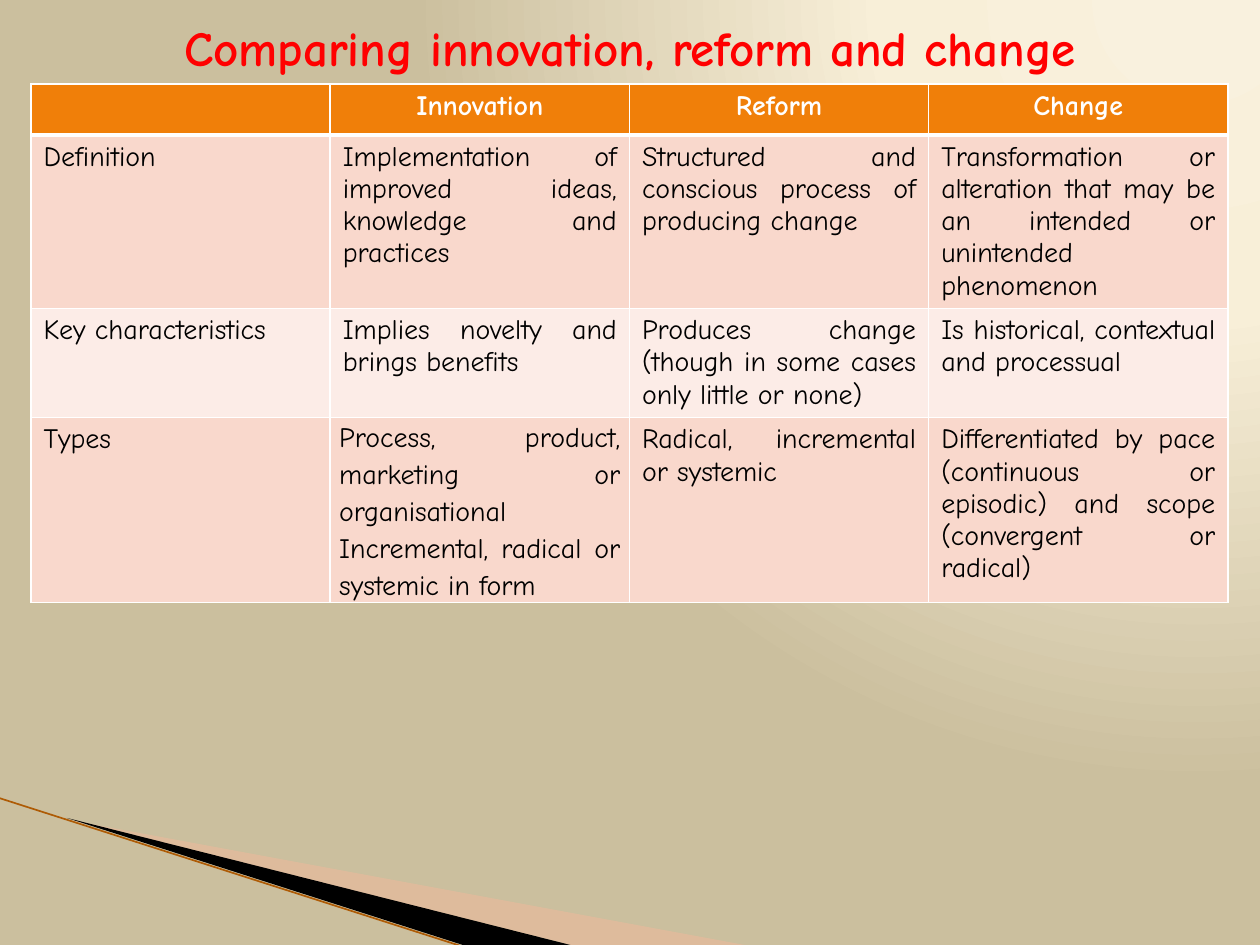
from pptx import Presentation
from pptx.dml.color import RGBColor
from pptx.enum.shapes import MSO_CONNECTOR
from pptx.enum.text import MSO_ANCHOR, PP_ALIGN
from pptx.oxml import parse_xml
from pptx.oxml.ns import nsdecls, qn
from pptx.util import Pt
from lxml import etree

CENTER, JUSTIFY = PP_ALIGN.CENTER, PP_ALIGN.JUSTIFY
MIDDLE = MSO_ANCHOR.MIDDLE
STRAIGHT = MSO_CONNECTOR.STRAIGHT

SCALE = 914400 / 126
FONT = "Comic Neue"
COLORS = {
    "glow": "F9F1DE", "cream": "F8EFD8", "sand": "CBBF9E",
    "wedge": "FCB79B", "black": "000000", "stripe": "AE5B05",
    "white": "FFFFFF", "header": "F07F09", "odd": "F9D8CC",
    "even": "FCECE7", "title": "FF0000",
}
ROWS = [
    ["", "Innovation", "Reform", "Change"],
    ["Definition",
     "Implementation of improved ideas, knowledge and practices",
     "Structured and conscious process of producing change",
     "Transformation or alteration that may be an intended or unintended phenomenon"],
    ["Key characteristics",
     "Implies novelty and brings benefits",
     "Produces change (though in some cases only little or none)",
     "Is historical, contextual and processual"],
    ["Types",
     "Process, product, marketing or organisational Incremental, radical or systemic in form",
     "Radical, incremental or systemic",
     "Differentiated by pace (continuous or episodic) and scope (convergent or radical)"],
]
ROW_HEIGHTS = [51, 173, 109, 185]


def px(n):
    return round(n * SCALE)


def rgb(name):
    return RGBColor.from_string(COLORS[name])


def style(p, size, color, bold, align):
    p.alignment = align
    p.font.name = FONT
    p.font.size = Pt(size)
    p.font.bold = bold
    p.font.color.rgb = rgb(color)


def add_background(s):
    stops = "".join(
        f'<a:gs pos="{pos * 1000}"><a:srgbClr val="{COLORS[name]}"/></a:gs>'
        for pos, name in [(0, "glow"), (40, "cream"), (100, "sand")])
    bg = parse_xml(
        f'<p:bg {nsdecls("p", "a")}><p:bgPr><a:gradFill><a:gsLst>{stops}</a:gsLst>'
        '<a:path path="circle"><a:fillToRect l="95000" t="-106000" r="5000" b="206000"/>'
        '</a:path></a:gradFill><a:effectLst/></p:bgPr></p:bg>')
    s.element.cSld.insert(0, bg)


def set_frame(sp, x, y, w, h):
    outline = sp._element.find(".//" + qn("a:path"))
    dx, dy = sp.left - px(x), sp.top - px(y)
    for pt in outline.iter(qn("a:pt")):
        pt.set("x", str(int(pt.get("x")) + dx))
        pt.set("y", str(int(pt.get("y")) + dy))
    outline.set("w", str(px(w)))
    outline.set("h", str(px(h)))
    sp.left, sp.top, sp.width, sp.height = px(x), px(y), px(w), px(h)


def add_wedge(s, x, y, w, h, points, color, alpha=100):
    corners = [(px(x + dx), px(y + dy)) for dx, dy in points]
    builder = s.shapes.build_freeform(*corners[0])
    builder.add_line_segments(corners[1:])
    sp = builder.convert_to_shape()
    set_frame(sp, x, y, w, h)
    sp.shadow.inherit = False
    sp.line.fill.background()
    sp.fill.solid()
    sp.fill.fore_color.rgb = rgb(color)
    if alpha < 100:
        clr = sp._element.spPr.find(".//" + qn("a:srgbClr"))
        etree.SubElement(clr, qn("a:alpha")).set("val", str(alpha * 1000))


def add_corner(s, x, y):
    add_wedge(s, x + 98, y - 109, 524, 199,
              [(-29, 131), (652, 257), (477, 257)], "wedge", 40)
    add_wedge(s, x - 8, y, 524, 116,
              [(75, 20), (582, 148), (477, 149)], "black")
    line = s.shapes.add_connector(STRAIGHT, px(x - 1), px(y), px(x + 467), px(y + 150))
    line.line.color.rgb = rgb("stripe")
    line.line.width = Pt(0.95)
    etree.SubElement(line._element.spPr, qn("a:effectLst"))


def add_title(s, x, y, w, h):
    tf = s.shapes.add_textbox(px(x), px(y), px(w), px(h)).text_frame
    tf.word_wrap = True
    tf.vertical_anchor = MIDDLE
    p = tf.paragraphs[0]
    p.text = "Comparing innovation, reform and change"
    style(p, 28, "title", True, CENTER)


def set_borders(cell, widths):
    tcPr = cell._tc.get_or_add_tcPr()
    for i, (side, width) in enumerate(widths.items()):
        tcPr.insert(i, parse_xml(
            f'<a:ln{side} {nsdecls("a")} w="{Pt(width)}"><a:solidFill>'
            f'<a:srgbClr val="{COLORS["white"]}"/></a:solidFill></a:ln{side}>'))


def add_comparison(s, x, y, w):
    frame = s.shapes.add_table(len(ROWS), len(ROWS[0]), px(x), px(y),
                               px(w), px(sum(ROW_HEIGHTS)))
    table = frame.table
    for i, texts in enumerate(ROWS):
        table.rows[i].height = px(ROW_HEIGHTS[i])
        header = i == 0
        for j, text in enumerate(texts):
            cell = table.cell(i, j)
            cell.fill.solid()
            cell.fill.fore_color.rgb = rgb("header" if header else "odd" if i % 2 else "even")
            set_borders(cell, {"L": 1, "R": 1, "T": 3 if i == 1 else 1,
                               "B": 3 if header else 1})
            p = cell.text_frame.paragraphs[0]
            p.text = text
            style(p, 16, "white" if header else "black", header,
                  CENTER if header else JUSTIFY)
    types = table.cell(3, 1)
    types.margin_left = types.margin_right = px(9)
    types.margin_top = types.margin_bottom = 0
    p = types.text_frame.paragraphs[0]
    p.line_spacing = 1.15
    p.space_after = Pt(10)


def main():
    prs = Presentation()
    prs.slide_width, prs.slide_height = px(1260), px(945)
    s = prs.slides.add_slide(prs.slide_layouts[6])
    add_background(s)
    add_corner(s, 0, 798)
    add_comparison(s, 31, 84, 1197)
    add_title(s, 63, 20, 1134, 53)
    prs.save("out.pptx")


if __name__ == "__main__":
    main()
